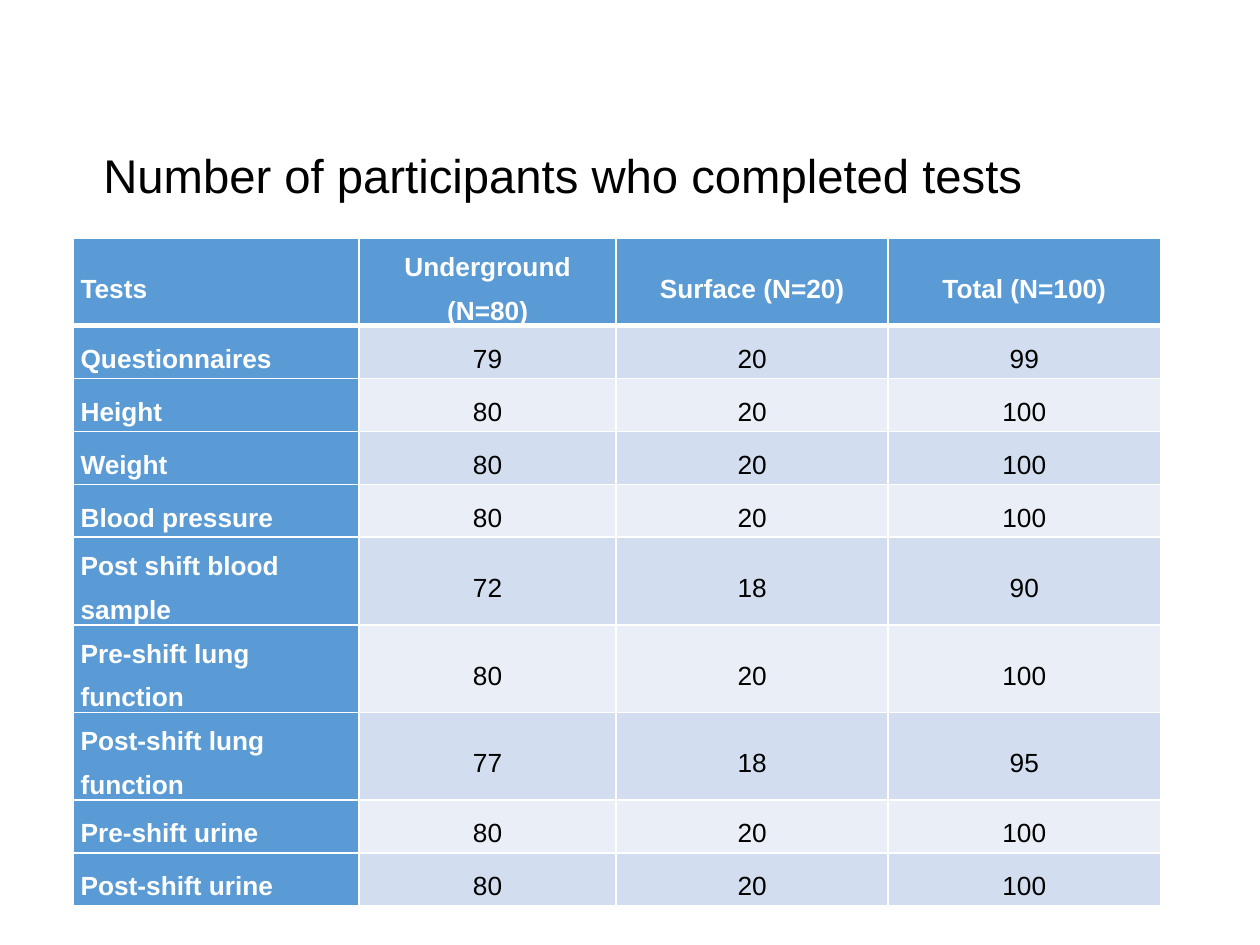
from lxml import etree
from pptx import Presentation
from pptx import util as u
from pptx.dml.color import RGBColor
from pptx.enum import text
from pptx.oxml.ns import qn

WHITE, BLACK, BLUE = "FFFFFF", "000000", "5B9BD5"
BANDS = ("D2DEEF", "EAEFF7")
COLUMN_WIDTHS = (2.27, 2.04, 2.16, 2.16)
HEADER_HEIGHT, ROW_HEIGHT = 0.48, 0.42
HEADER = ("Tests", "Underground (N=80)", "Surface (N=20)", "Total (N=100)")
RESULTS = (
    ("Questionnaires", 79, 20, 99),
    ("Height", 80, 20, 100),
    ("Weight", 80, 20, 100),
    ("Blood pressure", 80, 20, 100),
    ("Post shift blood sample", 72, 18, 90),
    ("Pre-shift lung function", 80, 20, 100),
    ("Post-shift lung function", 77, 18, 95),
    ("Pre-shift urine", 80, 20, 100),
    ("Post-shift urine", 80, 20, 100),
)


def rgb(color):
    return RGBColor.from_string(color)


def format_runs(p, size, color, bold=False):
    for r in p.runs:
        r.font.name = "Arial"
        r.font.size = u.Pt(size)
        r.font.bold = bold
        r.font.color.rgb = rgb(color)


def add_title(s, title):
    sp = s.shapes.title
    sp.left, sp.top = u.Inches(0.72), u.Inches(0.88)
    sp.width, sp.height = u.Inches(8.62), u.Inches(1.01)
    tf = sp.text_frame
    tf.text = title
    tf.word_wrap = True
    tf.vertical_anchor = text.MSO_ANCHOR.MIDDLE
    p = tf.paragraphs[0]
    p.alignment = text.PP_ALIGN.LEFT
    format_runs(p, 27, BLACK)


def set_borders(cell, top, bottom):
    """Draw white borders; top and bottom widths are in points."""
    props = cell._tc.get_or_add_tcPr()
    for side, width in (("L", 1), ("R", 1), ("T", top), ("B", bottom)):
        ln = etree.SubElement(props, qn(f"a:ln{side}"), w=str(u.Pt(width)))
        fill = etree.SubElement(ln, qn("a:solidFill"))
        etree.SubElement(fill, qn("a:srgbClr"), val=WHITE)


def format_cell(cell, row, col):
    heading = row == 0 or col == 0
    cell.margin_left = cell.margin_right = u.Inches(0.06)
    cell.margin_top = cell.margin_bottom = 0
    cell.vertical_anchor = text.MSO_ANCHOR.MIDDLE
    set_borders(cell, 3 if row == 1 else 1, 3 if row == 0 else 1)
    cell.fill.solid()
    cell.fill.fore_color.rgb = rgb(BLUE if heading else BANDS[(row - 1) % 2])
    p = cell.text_frame.paragraphs[0]
    p.alignment = text.PP_ALIGN.CENTER if col else text.PP_ALIGN.LEFT
    p.line_spacing = 1.5
    format_runs(p, 15, WHITE if heading else BLACK, heading)


def add_results_table(s):
    rows = (HEADER, *RESULTS)
    height = HEADER_HEIGHT + ROW_HEIGHT * len(RESULTS)
    table = s.shapes.add_table(
        len(rows), len(HEADER), u.Inches(0.58), u.Inches(1.89),
        u.Inches(sum(COLUMN_WIDTHS)), u.Inches(height)).table
    table.first_col = True
    for column, width in zip(table.columns, COLUMN_WIDTHS):
        column.width = u.Inches(width)
    for i, values in enumerate(rows):
        table.rows[i].height = u.Inches(ROW_HEIGHT if i else HEADER_HEIGHT)
        for j, value in enumerate(values):
            cell = table.cell(i, j)
            cell.text_frame.text = str(value)
            format_cell(cell, i, j)


def main():
    prs = Presentation()
    prs.slide_width, prs.slide_height = u.Inches(10), u.Inches(7.5)
    s = prs.slides.add_slide(prs.slide_layouts[5])
    add_title(s, "Number of participants who completed tests")
    add_results_table(s)
    prs.save("out.pptx")


if __name__ == "__main__":
    main()
